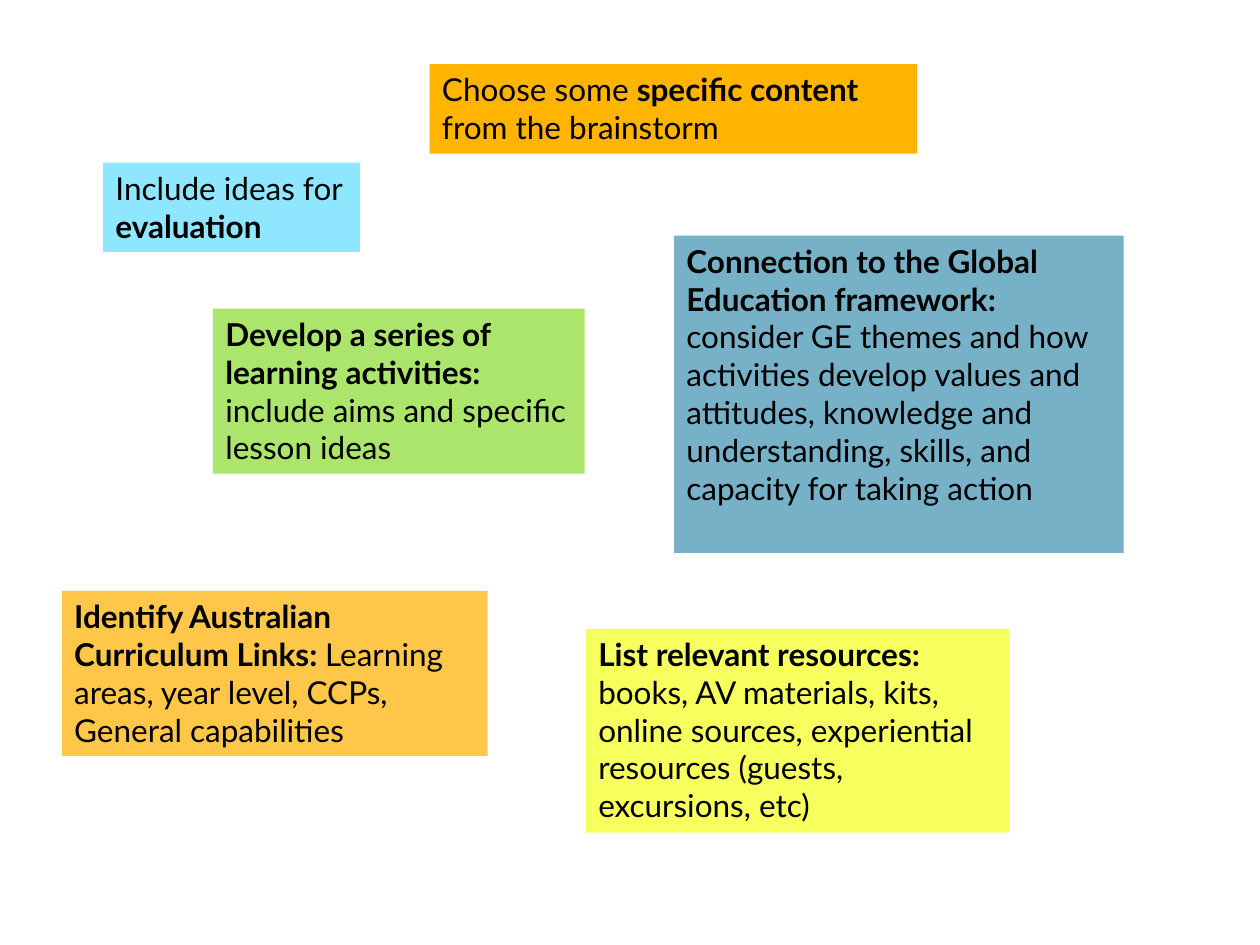
"""Build a slide of coloured notes on planning a unit of global education."""
from pptx import Presentation
from pptx.dml.color import RGBColor
from pptx.util import Pt

FONT = "Lato"
BLACK = RGBColor(0x00, 0x00, 0x00)
GREEN = RGBColor(0xAB, 0xE5, 0x6B)
ORANGE = RGBColor(0xFF, 0xB4, 0x00)
BLUE = RGBColor(0x76, 0xB1, 0xC7)
CYAN = RGBColor(0x8E, 0xE7, 0xFF)
YELLOW = RGBColor(0xF6, 0xFF, 0x5D)
AMBER = RGBColor(0xFF, 0xC7, 0x4A)

NOTES = [
    (GREEN, (121.7, 176.4, 212.4, 94.3), [
        ("Develop a series of learning activities: ", True),
        ("include aims and specific lesson ideas", False)]),
    (ORANGE, (245.5, 36.7, 278.6, 51.1), [
        ("Choose some ", False),
        ("specific content ", True),
        ("from the brainstorm", False)]),
    (BLUE, (385.2, 134.6, 257, 181.4), [
        ("Connection to the Global Education framework: ", True),
        ("consider GE themes and how activities develop values and attitudes, "
         "knowledge and understanding, skills, and capacity for taking action",
         False)]),
    (CYAN, (58.9, 92.9, 146.9, 51.1), [
        ("Include ideas for ", False),
        ("evaluation", True)]),
    (YELLOW, (334.8, 359.3, 241.9, 116.6), [
        ("List relevant resources:", True),
        (" books, AV materials, kits, online sources, experiential resources "
         "(guests, excursions, etc)", False)]),
    (AMBER, (35.3, 337.7, 243.4, 94.3), [
        ("Identify Australian Curriculum Links: ", True),
        ("Learning areas, year level, CCPs, General capabilities", False)]),
]


def add_run(p, text, bold):
    r = p.add_run()
    r.text = text
    r.font.name = FONT
    r.font.size = Pt(18)
    r.font.bold = bold
    r.font.color.rgb = BLACK


def add_note(s, color, box, parts):
    sp = s.shapes.add_textbox(*map(Pt, box))
    sp.fill.solid()
    sp.fill.fore_color.rgb = color
    tf = sp.text_frame
    tf.word_wrap = True
    for text, bold in parts:
        add_run(tf.paragraphs[0], text, bold)


def main():
    prs = Presentation()
    prs.slide_width, prs.slide_height = Pt(720), Pt(540)
    s = prs.slides.add_slide(prs.slide_layouts[6])
    for color, box, parts in NOTES:
        add_note(s, color, box, parts)
    prs.save("out.pptx")


if __name__ == "__main__":
    main()
